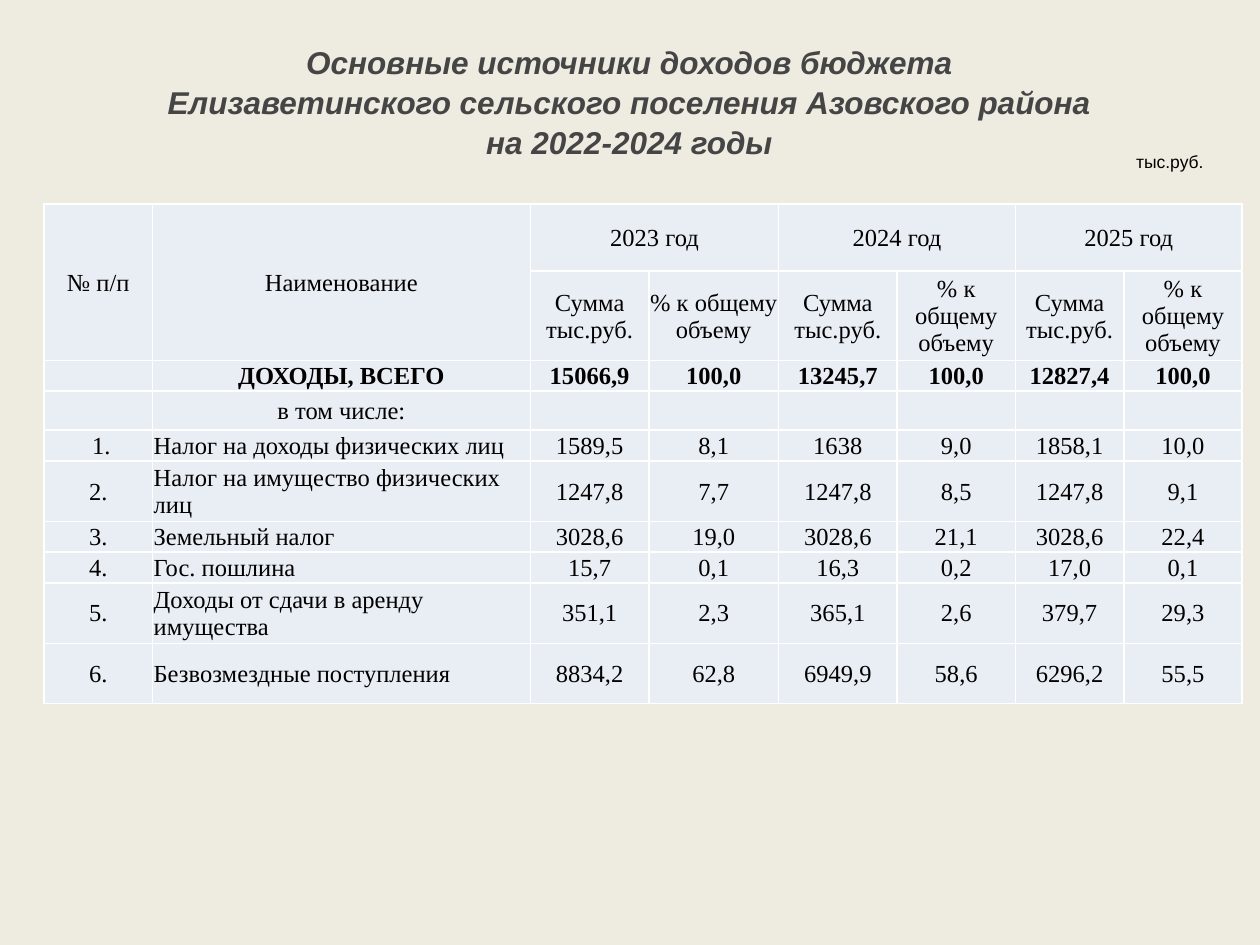
from dataclasses import dataclass

from lxml.etree import SubElement
from pptx import Presentation
from pptx.dml.color import RGBColor
from pptx.enum.text import MSO_ANCHOR as Anchor, MSO_AUTO_SIZE as AutoSize, PP_ALIGN as Align
from pptx.oxml.ns import qn
from pptx.util import Inches, Pt


@dataclass(frozen=True)
class Theme:
    """Colours, fonts and type sizes of the deck."""
    background: str = "EEECE1"
    title: str = "454545"
    text: str = "000000"
    cell: str = "E9EDF4"
    border: str = "FFFFFF"
    sans: str = "Arial"
    serif: str = "Times New Roman"
    title_size: int = 18
    unit_size: int = 10
    table_size: int = 14


def apply(target, values):
    """Set each attribute named in values on target."""
    for name, value in values.items():
        setattr(target, name, value)


class SlideBuilder:
    """Holds the theme and the current page, and adds elements to it."""

    def __init__(self, page, theme):
        self.page, self.theme = page, theme
        fill = page.background.fill
        fill.solid()
        fill.fore_color.rgb = RGBColor.from_string(theme.background)

    def add_span(self, para, text, align, color, **font):
        """Put one formatted span into a paragraph."""
        para.alignment = align
        span = para.add_run()
        span.text = text
        apply(span.font, font)
        span.font.color.rgb = RGBColor.from_string(color)

    def title(self, text, left, top, width, height):
        """Move and fill the title placeholder."""
        theme, box = self.theme, self.page.shapes.title
        apply(box, dict(left=Inches(left), top=Inches(top),
                        width=Inches(width), height=Inches(height)))
        apply(box.text_frame, dict(word_wrap=True, auto_size=AutoSize.NONE,
                                   vertical_anchor=Anchor.TOP))
        para = box.text_frame.paragraphs[0]
        para.line_spacing = 1.05
        self.add_span(para, text, Align.CENTER, theme.title, name=theme.sans,
                      size=Pt(theme.title_size), bold=True, italic=True)

    def label(self, text, left, top, width, height):
        """Add a small right-aligned text box."""
        theme = self.theme
        box = self.page.shapes.add_textbox(*map(Inches, (left, top, width, height)))
        box.text_frame.word_wrap = True
        self.add_span(box.text_frame.paragraphs[0], text, Align.RIGHT, theme.text,
                      name=theme.sans, size=Pt(theme.unit_size))

    def border(self, cell):
        """Draw thin lines on all four sides of a cell."""
        props = cell._tc.get_or_add_tcPr()
        for side in ("a:lnL", "a:lnR", "a:lnT", "a:lnB"):
            line = SubElement(props, qn(side), w=str(Pt(1)))
            SubElement(SubElement(line, qn("a:solidFill")), qn("a:srgbClr"),
                       val=self.theme.border)

    def cell(self, cell, text, align, bold):
        """Format and fill one table cell."""
        theme, inset = self.theme, Inches(0.01)
        apply(cell, dict(margin_left=inset, margin_right=inset, margin_top=inset,
                         margin_bottom=0, vertical_anchor=Anchor.MIDDLE))
        self.border(cell)
        cell.fill.solid()
        cell.fill.fore_color.rgb = RGBColor.from_string(theme.cell)
        para = cell.text_frame.paragraphs[0]
        if text:
            self.add_span(para, text, align, theme.text, name=theme.serif,
                          size=Pt(theme.table_size), bold=bold)
        else:
            para._p.get_or_add_endParaRPr().set("sz", str(theme.table_size * 100))

    def table(self, rows, widths, heights, left, top, merges, head_rows, bold_row):
        """Add a table with plain cells, merged where asked."""
        frame = self.page.shapes.add_table(
            len(rows), len(widths), Inches(left), Inches(top),
            Inches(sum(widths)), Inches(sum(heights)))
        table = frame.table
        apply(table, dict(first_row=False, horz_banding=False))
        for column, width in zip(table.columns, widths):
            column.width = Inches(width)
        for row, height in zip(table.rows, heights):
            row.height = Inches(height)
        for r, row in enumerate(rows):
            for c, text in enumerate(row):
                is_name = c == 1 and r > head_rows + 1
                self.cell(table.cell(r, c), text,
                          Align.LEFT if is_name else Align.CENTER, r == bold_row)
        for start, end in merges:
            table.cell(*start).merge(table.cell(*end))


YEARS = ("2023 год", "2024 год", "2025 год")
ROWS = [
    ["№ п/п", "Наименование"] + [text for year in YEARS for text in (year, "")],
    ["", ""] + ["Сумма тыс.руб.", "% к общему объему"] * len(YEARS),
    ["", "ДОХОДЫ, ВСЕГО", "15066,9", "100,0", "13245,7", "100,0", "12827,4", "100,0"],
    ["", "в том числе:"] + [""] * 6,
    [" 1.", "Налог на доходы физических лиц", "1589,5", "8,1", "1638", "9,0", "1858,1", "10,0"],
    ["2.", "Налог на имущество физических лиц", "1247,8", "7,7", "1247,8", "8,5", "1247,8", "9,1"],
    ["3.", "Земельный налог", "3028,6", "19,0", "3028,6", "21,1", "3028,6", "22,4"],
    ["4.", "Гос. пошлина", "15,7", "0,1", "16,3", "0,2", "17,0", "0,1"],
    ["5.", "Доходы от сдачи в аренду имущества", "351,1", "2,3", "365,1", "2,6", "379,7", "29,3"],
    ["6.", "Безвозмездные поступления", "8834,2", "62,8", "6949,9", "58,6", "6296,2", "55,5"],
]
WIDTHS = [0.86, 3, 0.94, 1.03, 0.94, 0.94, 0.86, 0.94]
HEIGHTS = [0.53, 0.71, 0.24, 0.31, 0.24, 0.48, 0.24, 0.24, 0.48, 0.48]
MERGES = ([((0, c), (1, c)) for c in (0, 1)]
          + [((0, c), (0, c + 1)) for c in (2, 4, 6)])


def main():
    """Build the budget revenue page."""
    deck = Presentation()
    apply(deck, dict(slide_width=Inches(10), slide_height=Inches(7.5)))
    page = deck.slides.add_slide(deck.slide_layouts.get_by_name("Title Only"))
    builder = SlideBuilder(page, Theme())
    builder.title("Основные источники доходов бюджета Елизаветинского сельского "
                  "поселения Азовского района на 2022-2024 годы",
                  1.21, 0.28, 7.57, 1.25)
    builder.label("тыс.руб.", 7.92, 1.15, 1.73, 0.27)
    builder.table(ROWS, WIDTHS, HEIGHTS, 0.35, 1.62, MERGES, head_rows=2, bold_row=2)
    deck.save("out.pptx")


if __name__ == "__main__":
    main()
